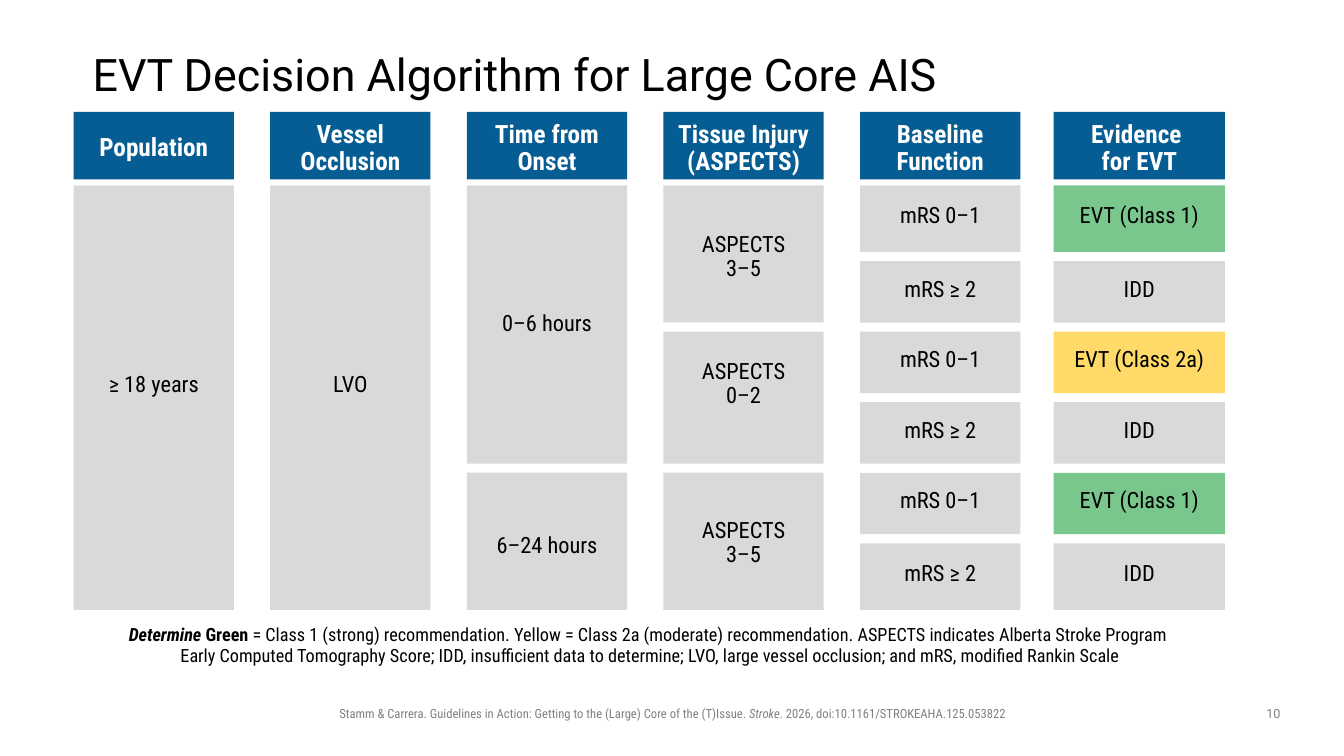
from pptx import Presentation
from pptx.dml.color import RGBColor
from pptx.enum.shapes import MSO_SHAPE
from pptx.enum.text import MSO_ANCHOR, PP_ALIGN
from pptx.util import Inches, Pt

RECTANGLE = MSO_SHAPE.RECTANGLE
TOP, MIDDLE = MSO_ANCHOR.TOP, MSO_ANCHOR.MIDDLE
LEFT, CENTER = PP_ALIGN.LEFT, PP_ALIGN.CENTER

SANS, CONDENSED = "Roboto", "Roboto Condensed"
BLACK, WHITE, MUTED = "000000", "FFFFFF", "808080"
BLUE, GREY, GREEN, YELLOW = "055D93", "D9D9D9", "79C78D", "FFDA68"

COLUMN_PITCH, COLUMN_WIDTH = 1.95, 1.59
EVIDENCE_OFFSET, EVIDENCE_WIDTH = 9.72, 1.7
HEADER_HEIGHT, HEADER_GAP = 0.67, 0.06
ROW_PITCH, ROW_HEIGHT, OUTER_EXTRA, LAST_ROW = 0.7, 0.61, 0.05, 5

HEADERS = ["Population", "Vessel Occlusion", "Time from Onset",
           "Tissue Injury (ASPECTS)", "Baseline Function", "Evidence \vfor EVT"]

# Each entry: column, first row, last row, label, fill, text shift in inches
MERGED_CELLS = [
    (0, 0, 5, "≥ 18 years", GREY, -0.12),
    (1, 0, 5, "LVO", GREY, -0.12),
    (2, 0, 3, "0–6 hours", GREY, 0),
    (2, 4, 5, "6–24 hours", GREY, 0.05),
    (3, 0, 1, "ASPECTS\v3–5", GREY, 0.03),
    (3, 2, 3, "ASPECTS\v0–2", GREY, -0.13),
    (3, 4, 5, "ASPECTS\v3–5", GREY, 0.02),
]
EVIDENCE = [("EVT (Class 1)", GREEN), ("IDD", GREY), ("EVT (Class 2a)", YELLOW),
            ("IDD", GREY), ("EVT (Class 1)", GREEN), ("IDD", GREY)]


def color(value):
    """Turn a hex string into a colour."""
    return RGBColor.from_string(value)


def set_font(font, name, size, value, bold=None):
    """Apply typeface, size, colour and weight."""
    font.name, font.size, font.bold = name, Pt(size), bold
    font.color.rgb = color(value)


def add_text(page, box, spans, name, size, value, align=CENTER, anchor=TOP,
             spacing=1.0, inset=(0.1, 0.05)):
    """Place a wrapped text box of (text, bold, italic) spans."""
    frame = page.shapes.add_textbox(*map(Inches, box)).text_frame
    frame.word_wrap, frame.vertical_anchor = True, anchor
    frame.margin_left = frame.margin_right = Inches(inset[0])
    frame.margin_top = frame.margin_bottom = Inches(inset[1])
    para = frame.paragraphs[0]
    para.alignment, para.line_spacing = align, spacing
    set_font(para.font, name, size, value)
    for text, bold, italic in spans:
        for index, line in enumerate(text.split("\v")):
            if index:
                para.add_line_break()
            span = para.add_run()
            span.text = line
            set_font(span.font, name, size, value, bold)
            span.font.italic = italic


def add_cell(page, box, label, fill, size, value, bold=False, shift=0):
    """Draw a filled rectangle with a centred label."""
    cell = page.shapes.add_shape(RECTANGLE, *map(Inches, box))
    cell.shadow.inherit = False
    cell.fill.solid()
    cell.fill.fore_color.rgb = color(fill)
    cell.line.fill.background()
    frame = cell.text_frame
    frame.word_wrap, frame.vertical_anchor = True, MIDDLE
    frame.margin_left = frame.margin_right = Inches(0.05)
    frame.margin_top = Inches(max(0, 2 * shift))
    frame.margin_bottom = Inches(max(0, -2 * shift))
    para = frame.paragraphs[0]
    para.text = label
    para.alignment, para.line_spacing = CENTER, 0.9
    set_font(para.font, CONDENSED, size, value, bold)


def column_span(left, column):
    """Return the left edge and width of a column."""
    if column == len(HEADERS) - 1:
        return left + EVIDENCE_OFFSET, EVIDENCE_WIDTH
    return left + column * COLUMN_PITCH, COLUMN_WIDTH


def row_span(top, first, last):
    """Return the top edge and height of a run of rows."""
    start = top + OUTER_EXTRA + first * ROW_PITCH
    end = top + OUTER_EXTRA + last * ROW_PITCH + ROW_HEIGHT
    if first == 0:
        start -= OUTER_EXTRA
    if last == LAST_ROW:
        end += OUTER_EXTRA
    return start, end - start


def add_algorithm(page, left, top):
    """Build the header row and the decision cells below it."""
    for column, label in enumerate(HEADERS):
        x, width = column_span(left, column)
        add_cell(page, (x, top, width, HEADER_HEIGHT), label, BLUE, 18, WHITE,
                 bold=True, shift=0.03)
    cells = list(MERGED_CELLS)
    for row, (label, fill) in enumerate(EVIDENCE):
        function = "mRS ≥ 2" if row % 2 else "mRS 0–1"
        cells.append((4, row, row, function, GREY, -0.02))
        cells.append((5, row, row, label, fill, -0.02))
    for column, first, last, label, fill, shift in cells:
        x, width = column_span(left, column)
        y, height = row_span(top + HEADER_HEIGHT + HEADER_GAP, first, last)
        add_cell(page, (x, y, width, height), label, fill, 16, BLACK, shift=shift)


def add_footer(page, top):
    """Place the citation and the page number."""
    citation = [
        ("Stamm & Carrera. Guidelines in Action: Getting to the (Large) Core "
         "of the (T)Issue. ", False, False),
        ("Stroke", False, True),
        (". 2026, doi:10.1161/STROKEAHA.125.053822", False, False),
    ]
    add_text(page, (2.36, top, 8.62, 0.25), citation, CONDENSED, 9, MUTED)
    add_text(page, (12.42, top, 0.42, 0.26), [("10", False, False)], SANS, 9, MUTED)


def main():
    """Build the slide and save it."""
    deck = Presentation()
    deck.slide_width, deck.slide_height = Inches(13.33), Inches(7.5)
    page = deck.slides.add_slide(deck.slide_layouts[6])
    add_text(page, (0.92, 0.4, 11.5, 0.72),
             [("EVT Decision Algorithm for Large Core AIS", False, False)],
             SANS, 32, BLACK, align=LEFT, anchor=MIDDLE, spacing=0.9, inset=(0, 0))
    add_algorithm(page, 0.73, 1.11)
    legend = [
        ("Determine ", True, True),
        ("Green ", True, False),
        ("= Class 1 (strong) recommendation. Yellow = Class 2a (moderate) "
         "recommendation. ASPECTS indicates Alberta Stroke Program \v"
         "Early Computed Tomography Score; IDD, insufficient data to determine; "
         "LVO, large vessel occlusion; and mRS, modified Rankin Scale", False, False),
    ]
    add_text(page, (0.73, 6.13, 11.42, 0.54), legend, CONDENSED, 13, BLACK)
    add_footer(page, 6.95)
    deck.save("out.pptx")


if __name__ == "__main__":
    main()
